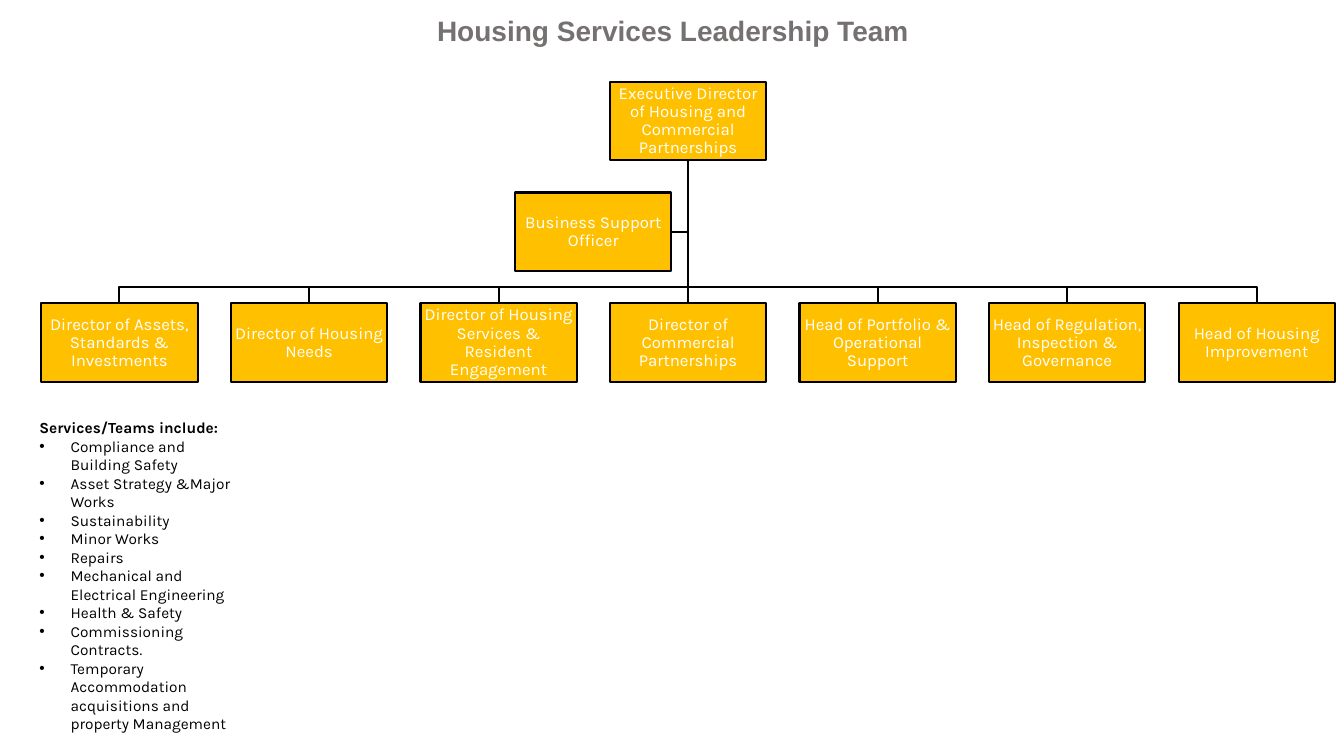
from lxml import etree
from pptx import Presentation
from pptx import util as u
from pptx.dml.color import RGBColor
from pptx.enum import shapes, text
from pptx.oxml.ns import qn

HUES = {"gold": "FFC000", "ink": "000000", "white": "FFFFFF", "grey": "767171"}
BOX_W, BOX_H = 1.55, 0.78
STEP = 1.88  # from one box to the next in the row

CHIEF = "Executive Director of Housing and Commercial Partnerships"
AIDE = "Business Support Officer"
HEADS = [
    "Director of Assets, Standards & Investments",
    "Director of Housing Needs",
    "Director of Housing Services & Resident Engagement",
    "Director of Commercial Partnerships",
    "Head of Portfolio & Operational Support",
    "Head of Regulation, Inspection & Governance",
    "Head of Housing Improvement",
]
TEAMS = [
    "Compliance and Building Safety",
    "Asset Strategy &Major Works",
    "Sustainability",
    "Minor Works",
    "Repairs",
    "Mechanical and Electrical Engineering",
    "Health & Safety",
    "Commissioning Contracts.",
    "Temporary Accommodation acquisitions and property Management",
]


def color(name):
    return RGBColor.from_string(HUES[name])


def write(para, words, size, hue, font="Karla", bold=False,
          align=text.PP_ALIGN.LEFT, space=1.0):
    """Fill one paragraph and format it."""
    run = para.add_run()
    run.text = words
    run.font.size, run.font.name, run.font.bold = u.Pt(size), font, bold
    run.font.color.rgb = color(hue)
    para.alignment, para.line_spacing = align, space
    para.space_before = para.space_after = u.Pt(0)


def mark(para, sign=None, indent=0.0):
    """Set the bullet and its hanging indent."""
    props = para._p.get_or_add_pPr()
    props.set("marL", str(u.Inches(indent)))
    props.set("indent", str(-u.Inches(indent)))
    if sign:
        etree.SubElement(props, qn("a:buFont")).set("typeface", "Arial")
        etree.SubElement(props, qn("a:buChar")).set("char", sign)
    else:
        etree.SubElement(props, qn("a:buNone"))


def place(shape, left, top, width, height):
    shape.left, shape.top = u.Inches(left), u.Inches(top)
    shape.width, shape.height = u.Inches(width), u.Inches(height)


def stroke(line):
    line.color.rgb = color("ink")
    line.width = u.Pt(1.5)


def post(slide, words, left, top):
    """One box of the chart."""
    box = slide.shapes.add_shape(
        shapes.MSO_SHAPE.RECTANGLE, u.Inches(left), u.Inches(top),
        u.Inches(BOX_W), u.Inches(BOX_H))
    box.shadow.inherit = False
    box.fill.solid()
    box.fill.fore_color.rgb = color("gold")
    stroke(box.line)
    frame = box.text_frame
    frame.word_wrap = True
    frame.vertical_anchor = text.MSO_ANCHOR.MIDDLE
    frame.margin_left = frame.margin_right = u.Inches(0.01)
    frame.margin_top = frame.margin_bottom = u.Inches(0.01)
    write(frame.paragraphs[0], words, 12, "white",
          align=text.PP_ALIGN.CENTER, space=0.9)


def elbow(slide, points):
    """An open line with square bends."""
    spots = [(u.Inches(x), u.Inches(y)) for x, y in points]
    pen = slide.shapes.build_freeform(*spots[0])
    pen.add_line_segments(spots[1:], close=False)
    path = pen.convert_to_shape()
    path.shadow.inherit = False
    path.fill.background()
    stroke(path.line)


def trunk(slide, x, top, end):
    line = slide.shapes.add_connector(
        shapes.MSO_CONNECTOR.STRAIGHT,
        u.Inches(x), u.Inches(top), u.Inches(x), u.Inches(end))
    stroke(line.line)
    etree.SubElement(line._element.spPr, qn("a:effectLst"))


def chart(slide, left, top):
    """Chief, aide and the row of heads, with their lines."""
    mid = left + len(HEADS) // 2 * STEP
    axis = mid + BOX_W / 2
    base, row, side = top + BOX_H, top + 2.2, top + 1.1
    rail = row - 0.16
    aide = mid - STEP / 2

    # Lines, behind the boxes
    level = side + BOX_H / 2
    elbow(slide, [(axis, base), (axis, level), (aide + BOX_W, level)])
    for i in range(len(HEADS)):
        x = left + i * STEP + BOX_W / 2
        if i == len(HEADS) // 2:
            trunk(slide, axis, base, row)
        else:
            elbow(slide, [(axis, base), (axis, rail), (x, rail), (x, row)])

    # Boxes
    post(slide, CHIEF, mid, top)
    for i, words in enumerate(HEADS):
        post(slide, words, left + i * STEP, row)
    post(slide, AIDE, aide, side)


def title(slide, left, top, width, height):
    shape = slide.shapes.title
    place(shape, left, top, width, height)
    frame = shape.text_frame
    frame.word_wrap = True
    frame.auto_size = text.MSO_AUTO_SIZE.NONE
    frame.vertical_anchor = text.MSO_ANCHOR.BOTTOM
    write(frame.paragraphs[0], "Housing Services Leadership Team", 20, "grey",
          font="Arial", bold=True, align=text.PP_ALIGN.CENTER, space=0.9)


def teams(slide, left, top, width, height):
    """Heading and bulleted list of services."""
    shape = slide.placeholders[1]
    place(shape, left, top, width, height)
    frame = shape.text_frame
    frame.word_wrap = True
    frame.auto_size = text.MSO_AUTO_SIZE.NONE
    frame.vertical_anchor = text.MSO_ANCHOR.TOP
    head = frame.paragraphs[0]
    mark(head)
    write(head, "Services/Teams include:", 11, "ink", bold=True)
    for words in TEAMS:
        para = frame.add_paragraph()
        mark(para, "•", 0.31)
        write(para, words, 11, "ink")


def main():
    deck = Presentation()
    deck.slide_width, deck.slide_height = u.Inches(13.33), u.Inches(7.5)
    slide = deck.slides.add_slide(deck.slide_layouts[1])
    title(slide, 0.44, 0.11, 12.47, 0.41)
    chart(slide, 0.41, 0.81)
    teams(slide, 0.29, 4.1, 2.16, 3.25)
    deck.save("out.pptx")


if __name__ == "__main__":
    main()
